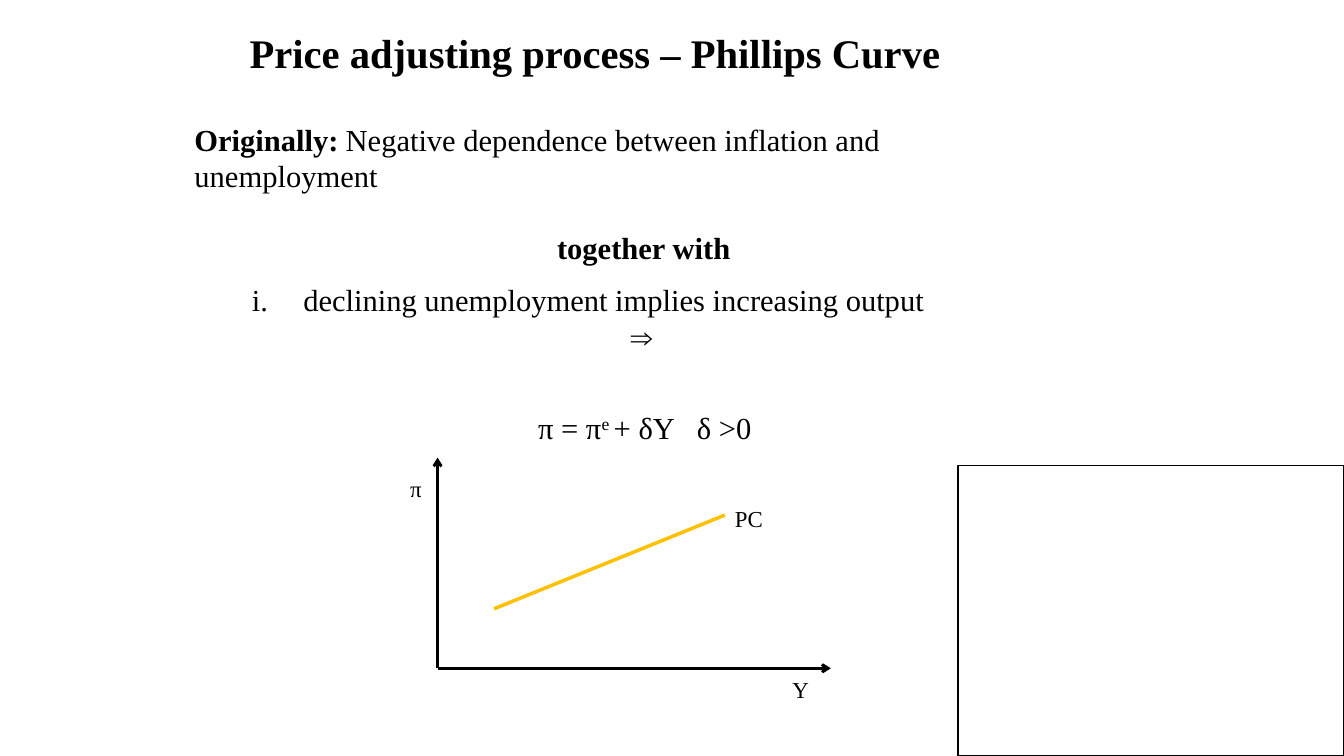
from dataclasses import dataclass

from lxml.etree import SubElement
from pptx import Presentation
from pptx.dml.color import RGBColor
from pptx.enum.shapes import MSO_CONNECTOR, MSO_SHAPE
from pptx.enum.text import MSO_ANCHOR, PP_ALIGN
from pptx.oxml.ns import qn
from pptx.util import Inches, Pt

FONT = "Times New Roman"
BLACK = "000000"
GOLD = "FFC000"
BODY = 21.8
LABEL = 16.3


@dataclass
class Run:
    text: str
    bold: bool = False
    sup: bool = False


@dataclass
class Para:
    runs: list[Run]
    mid: bool = False
    roman: bool = False


@dataclass
class Text:
    box: tuple[float, float, float, float]
    paras: list[Para]
    size: float = BODY
    wrap: bool = True
    anchor: MSO_ANCHOR = MSO_ANCHOR.TOP


@dataclass
class Line:
    start: tuple[float, float]
    end: tuple[float, float]
    color: str = BLACK
    width: float = 2
    arrow: bool = True


def color(code: str) -> RGBColor:
    return RGBColor.from_string(code)


def add_text(slide, item: Text) -> None:
    frame = slide.shapes.add_textbox(*map(Inches, item.box)).text_frame
    frame.word_wrap = item.wrap
    frame.vertical_anchor = item.anchor
    for i, para in enumerate(item.paras):
        line = frame.paragraphs[0] if i == 0 else frame.add_paragraph()
        line.alignment = PP_ALIGN.CENTER if para.mid else PP_ALIGN.LEFT
        if para.roman:
            props = line._p.get_or_add_pPr()
            props.set("marL", str(Inches(0.51)))
            props.set("indent", str(Inches(-0.51)))
            SubElement(props, qn("a:buFont"), typeface=FONT)
            SubElement(props, qn("a:buAutoNum"), type="romanLcPeriod")
        for part in para.runs:
            for j, piece in enumerate(part.text.split("\n")):
                if j:
                    line.add_line_break()
                run = line.add_run()
                run.text = piece
                font = run.font
                font.name, font.size, font.bold = FONT, Pt(item.size), part.bold
                font.color.rgb = color(BLACK)
                if part.sup:
                    run._r.get_or_add_rPr().set("baseline", "30000")


def add_line(slide, item: Line) -> None:
    line = slide.shapes.add_connector(
        MSO_CONNECTOR.STRAIGHT, *map(Inches, item.start + item.end))
    line.line.color.rgb = color(item.color)
    line.line.width = Pt(item.width)
    if item.arrow:
        SubElement(line.line._get_or_add_ln(), qn("a:tailEnd"), type="arrow")
    SubElement(line._element.spPr, qn("a:effectLst"))


def add_frame(slide) -> None:
    frame = slide.shapes.add_shape(
        MSO_SHAPE.RECTANGLE, *map(Inches, (9.5, 4.62, 3.83, 2.88)))
    frame.shadow.inherit = False
    frame.fill.background()
    frame.line.color.rgb = color(BLACK)
    frame.line.width = Pt(1)


def label(text: str, left: float, top: float, width: float) -> Text:
    return Text((left, top, width, 0.38), [Para([Run(text)])], LABEL, False)


ORIGIN = (4.34, 6.63)

TEXTS = [
    # Title
    Text((1.75, 0.11, 8.31, 0.81),
         [Para([Run("Price adjusting process – Phillips Curve", True)], True)],
         29, anchor=MSO_ANCHOR.MIDDLE),
    # Statement
    Text((1.83, 1.15, 9.11, 0.83),
         [Para([Run("Originally:", True),
                Run("\tNegative dependence between inflation and\nunemployment")])]),
    Text((1.83, 2.22, 9.11, 0.47),
         [Para([Run("together with", True)], True)]),
    Text((2.4, 2.74, 7.93, 0.83),
         [Para([Run("declining unemployment implies increasing output")],
               roman=True),
          Para([Run("⇒")], True)]),
    # Equation
    Text((1.84, 4.01, 9.11, 0.47),
         [Para([Run("π = π"), Run("e ", sup=True), Run("+ δY\t δ >0")], True)]),
    # Graph labels
    label("π", 3.97, 4.66, 0.33),
    label("Y", 7.76, 6.65, 0.37),
    label("PC", 7.19, 4.96, 0.48),
]

LINES = [
    # Axes
    Line(ORIGIN, (4.34, 4.54)),
    Line(ORIGIN, (8.24, 6.63)),
    # Phillips curve
    Line((4.9, 6.04), (7.19, 5.11), GOLD, 2.5, False),
]


def main() -> None:
    deck = Presentation()
    deck.slide_width, deck.slide_height = Inches(13.33), Inches(7.5)
    slide = deck.slides.add_slide(deck.slide_layouts[6])
    for text in TEXTS:
        add_text(slide, text)
    for line in LINES:
        add_line(slide, line)
    add_frame(slide)
    deck.save("out.pptx")


if __name__ == "__main__":
    main()
